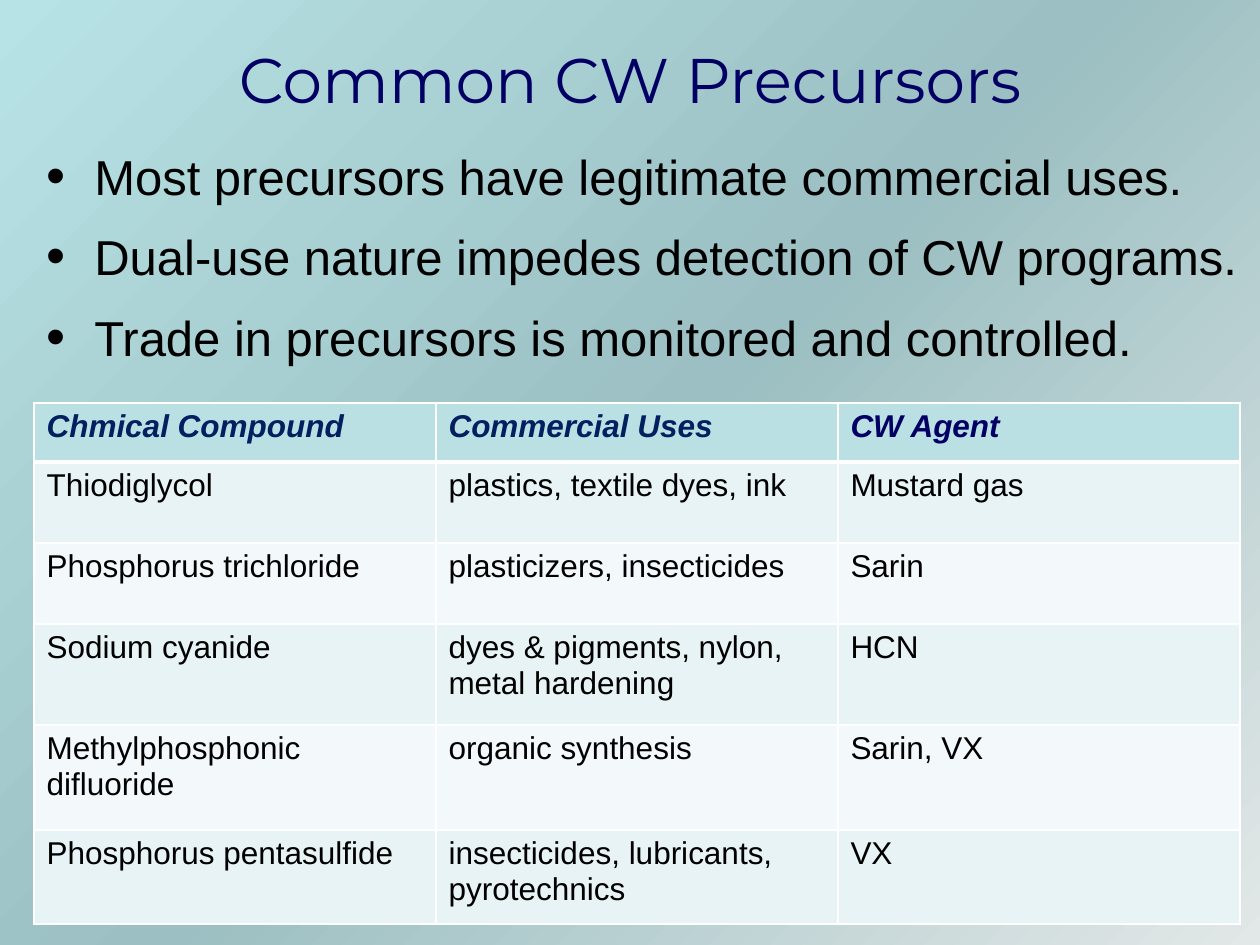
"""Builds the slide on common CW precursors: title, bullets and table."""
from copy import deepcopy

from lxml import etree
from pptx import Presentation
from pptx import util as u
from pptx.dml.color import RGBColor
from pptx.enum import text
from pptx.oxml.ns import qn

TITLE = "Common CW Precursors"
POINTS = [
    "Most precursors have legitimate commercial uses.",
    "Dual-use nature impedes detection of CW programs.",
    "Trade in precursors is monitored and controlled.",
]
HEADINGS = [
    ("Chmical Compound", "002060"),
    ("Commercial Uses", "002060"),
    ("CW Agent", "000064"),
]
PRECURSORS = [
    ("Thiodiglycol", "plastics, textile dyes, ink", "Mustard gas"),
    ("Phosphorus trichloride", "plasticizers, insecticides", "Sarin"),
    ("Sodium cyanide", "dyes & pigments, nylon, metal hardening", "HCN"),
    ("Methylphosphonic difluoride", "organic synthesis", "Sarin, VX"),
    ("Phosphorus pentasulfide", "insecticides, lubricants, pyrotechnics", "VX"),
]
ROW_HEIGHTS = [59, 81, 81, 101, 105, 94]
COLUMN_WIDTH = 402
HEADING_FILL, BAND_FILLS = "BBE0E3", ["E7F3F4", "F3F9FA"]
BACKDROP = ["B8E3E6", "9BBFC2", "E2E7E7"]


def px(length):
    return u.Emu(round(length * 914400 / 126))


def rgb(value):
    return RGBColor.from_string(value)


def add_run(paragraph, words, size, color="000000", face="Arial", strong=False):
    run = paragraph.add_run()
    run.text = words
    font = run.font
    font.name, font.size = face, u.Pt(size)
    font.bold = font.italic = strong
    font.color.rgb = rgb(color)


def add_bullet(paragraph):
    properties = paragraph._p.get_or_add_pPr()
    properties.set("marL", str(px(48)))
    properties.set("indent", str(-px(48)))
    for tag, key, value in [
        ("a:buSzPct", "val", "111000"),
        ("a:buFont", "typeface", "Arial"),
        ("a:buChar", "char", "•"),
    ]:
        etree.SubElement(properties, qn(tag)).set(key, value)


def add_borders(cell, widths):
    properties = cell._tc.get_or_add_tcPr()
    for side, width in widths.items():
        line = etree.SubElement(properties, qn(f"a:ln{side}"), w=str(u.Pt(width)))
        fill = etree.SubElement(line, qn("a:solidFill"))
        etree.SubElement(fill, qn("a:srgbClr"), val="FFFFFF")


def paint_backdrop(slide):
    fill = slide.background.fill
    fill.gradient()
    fill.gradient_angle = 315
    stop_list = next(slide.element.iter(qn("a:gsLst")))
    stop_list.insert(1, deepcopy(stop_list[0]))
    for i, (stop, color) in enumerate(zip(fill.gradient_stops, BACKDROP)):
        stop.color.rgb = rgb(color)
        stop.position = i / 2


def add_title(slide):
    title = slide.shapes.title
    title.left, title.top, title.width, title.height = map(px, (29, 30, 1202, 96))
    frame = title.text_frame
    frame.vertical_anchor = text.MSO_ANCHOR.MIDDLE
    frame.paragraphs[0].alignment = text.PP_ALIGN.CENTER
    add_run(frame.paragraphs[0], TITLE, 36, "000064", "Montserrat")


def add_points(slide):
    frame = slide.shapes.add_textbox(*map(px, (34, 140, 1226, 238))).text_frame
    frame.word_wrap = True
    for i, point in enumerate(POINTS):
        paragraph = frame.add_paragraph() if i else frame.paragraphs[0]
        add_bullet(paragraph)
        if i:
            paragraph.space_before = u.Pt(12.4)
        add_run(paragraph, point, 28)


def add_precursors(slide):
    rows, columns = len(ROW_HEIGHTS), len(HEADINGS)
    bounds = map(px, (34, 403, COLUMN_WIDTH * columns, sum(ROW_HEIGHTS)))
    table = slide.shapes.add_table(rows, columns, *bounds).table
    table.horz_banding = False
    for column in table.columns:
        column.width = px(COLUMN_WIDTH)
    for row, height in zip(table.rows, ROW_HEIGHTS):
        row.height = px(height)

    body = [[(words, "000000") for words in precursor] for precursor in PRECURSORS]
    for r, entries in enumerate([HEADINGS] + body):
        heading = r == 0
        for c, (words, color) in enumerate(entries):
            cell = table.cell(r, c)
            add_borders(cell, {"L": 1, "R": 1, "T": 3 if r == 1 else 1, "B": 3 if heading else 1})
            cell.fill.solid()
            cell.fill.fore_color.rgb = rgb(HEADING_FILL if heading else BAND_FILLS[(r - 1) % 2])
            add_run(cell.text_frame.paragraphs[0], words, 18, color, strong=heading)


def main():
    deck = Presentation()
    deck.slide_width, deck.slide_height = px(1260), px(945)
    slide = deck.slides.add_slide(deck.slide_layouts[5])
    paint_backdrop(slide)
    add_title(slide)
    add_points(slide)
    add_precursors(slide)
    deck.save("out.pptx")


if __name__ == "__main__":
    main()
